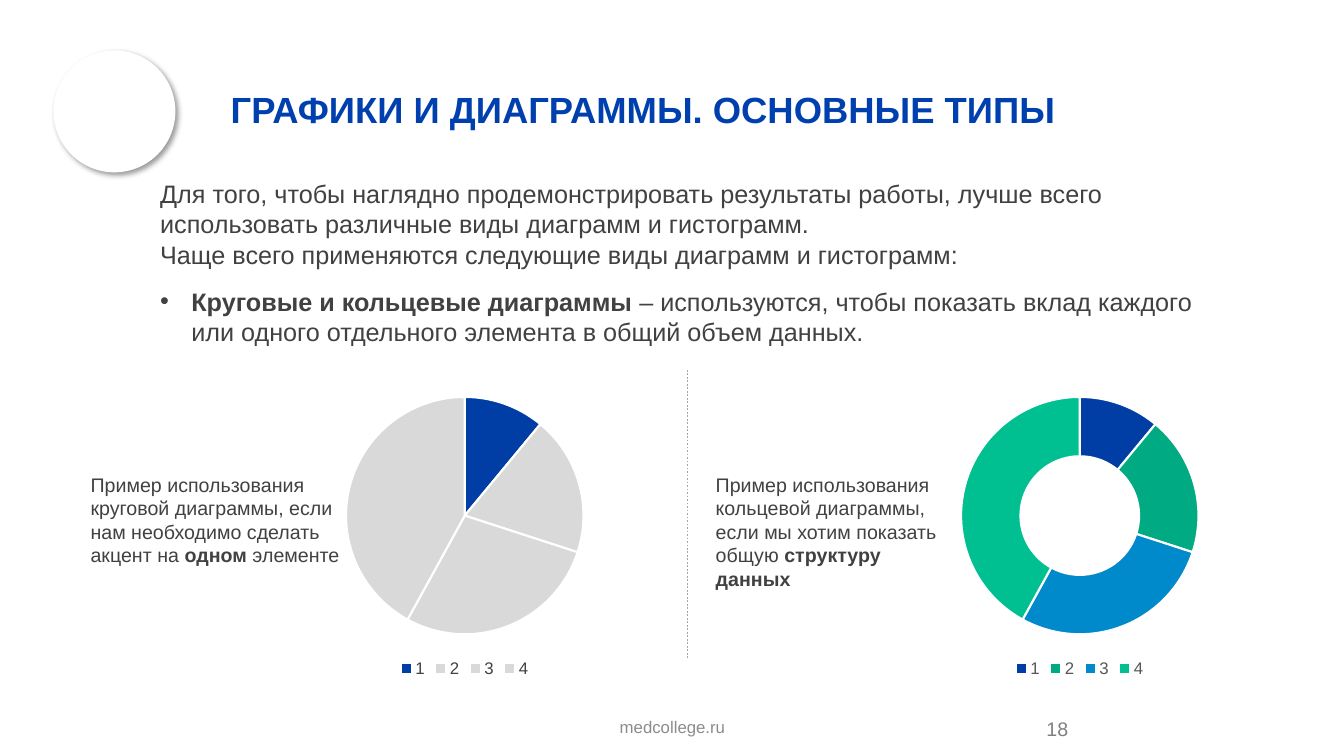
import pptx
import pptx.util
import pptx.chart.data
import pptx.dml.color
import pptx.enum.chart
import pptx.enum.dml
import pptx.enum.shapes
import pptx.enum.text
from lxml import etree
from pptx.oxml.ns import qn

Inches = pptx.util.Inches
Pt = pptx.util.Pt
RGBColor = pptx.dml.color.RGBColor
PP_ALIGN = pptx.enum.text.PP_ALIGN
MSO_ANCHOR = pptx.enum.text.MSO_ANCHOR
XL_CHART_TYPE = pptx.enum.chart.XL_CHART_TYPE

FONT = "Arial"
WHITE = RGBColor(0xFF, 0xFF, 0xFF)
TITLE_BLUE = RGBColor(0x00, 0x40, 0xAE)
TEXT_GRAY = RGBColor(0x41, 0x41, 0x41)
LABEL_GRAY = RGBColor(0x57, 0x57, 0x57)
NUMBER_GRAY = RGBColor(0x80, 0x80, 0x80)
FOOTER_GRAY = RGBColor(0x8C, 0x8C, 0x8C)
DIVIDER_GRAY = RGBColor(0xA6, 0xA6, 0xA6)
NAVY = RGBColor(0x00, 0x3D, 0xA5)
MUTED = RGBColor(0xD9, 0xD9, 0xD9)
GREEN = RGBColor(0x00, 0xAB, 0x84)
BLUE = RGBColor(0x00, 0x89, 0xCB)
MINT = RGBColor(0x00, 0xC0, 0x92)

SHARES = {"1": 11, "2": 19, "3": 28, "4": 42}


def add_text(slide, left, top, width, height, paragraphs, size, color):
    box = slide.shapes.add_textbox(Inches(left), Inches(top), Inches(width), Inches(height))
    frame = box.text_frame
    frame.word_wrap = True
    for index, pieces in enumerate(paragraphs):
        paragraph = frame.add_paragraph() if index else frame.paragraphs[0]
        for text, bold in pieces:
            run = paragraph.add_run()
            run.text = text
            run.font.name = FONT
            run.font.size = Pt(size)
            run.font.bold = bold
            run.font.color.rgb = color
    return frame


def add_bullet(paragraph, indent):
    properties = paragraph._p.get_or_add_pPr()
    properties.set("marL", str(Inches(indent)))
    properties.set("indent", str(-Inches(indent)))
    etree.SubElement(properties, qn("a:buFont"), typeface=FONT)
    etree.SubElement(properties, qn("a:buChar"), char="•")


def add_badge(slide):
    badge = slide.shapes.add_shape(
        pptx.enum.shapes.MSO_SHAPE.OVAL, Inches(0.53), Inches(0.5), Inches(1.21), Inches(1.21))
    badge.fill.solid()
    badge.fill.fore_color.rgb = WHITE
    badge.line.fill.background()
    badge.shadow.inherit = False
    effects = badge._element.spPr.find(qn("a:effectLst"))
    shadow = etree.SubElement(
        effects, qn("a:outerShdw"), blurRad=str(Pt(4)), dist=str(Pt(3)),
        dir="2700000", algn="tl", rotWithShape="0")
    shade = etree.SubElement(shadow, qn("a:srgbClr"), val="000000")
    etree.SubElement(shade, qn("a:alpha"), val="40000")


def add_divider(slide):
    divider = slide.shapes.add_connector(
        pptx.enum.shapes.MSO_CONNECTOR.STRAIGHT,
        Inches(6.82), Inches(3.67), Inches(6.82), Inches(6.54))
    divider.line.color.rgb = DIVIDER_GRAY
    divider.line.width = Pt(1.25)
    divider.line.dash_style = pptx.enum.dml.MSO_LINE.ROUND_DOT
    etree.SubElement(divider._element.spPr, qn("a:effectLst"))


def add_share_chart(slide, kind, left, width, colors, legend_color):
    data = pptx.chart.data.CategoryChartData()
    data.categories = list(SHARES)
    data.add_series("Series 1", list(SHARES.values()))
    chart = slide.shapes.add_chart(
        kind, Inches(left), Inches(3.8), Inches(width), Inches(2.96), data).chart
    chart.has_title = False
    chart.font.name = FONT
    chart.font.size = Pt(10)
    chart.font.color.rgb = LABEL_GRAY
    chart.has_legend = True
    chart.legend.position = pptx.enum.chart.XL_LEGEND_POSITION.BOTTOM
    chart.legend.include_in_layout = False
    chart.legend.font.name = FONT
    chart.legend.font.size = Pt(12)
    chart.legend.font.color.rgb = legend_color
    plot = chart.plots[0]
    plot.vary_by_categories = True
    plot.has_data_labels = False
    for index, color in enumerate(colors):
        sector = plot.series[0].points[index].format
        sector.fill.solid()
        sector.fill.fore_color.rgb = color
        sector.line.color.rgb = WHITE
        sector.line.width = Pt(1.5)
    return chart


def add_title(slide):
    title = add_text(slide, 2.19, 0.5, 10.4, 1.21,
                     [[("ГРАФИКИ И ДИАГРАММЫ. ОСНОВНЫЕ ТИПЫ", True)]], 26, TITLE_BLUE)
    title.vertical_anchor = MSO_ANCHOR.MIDDLE
    title.margin_top = title.margin_bottom = Inches(0.04)
    title.paragraphs[0].line_spacing = 0.9


def add_introduction(slide):
    introduction = add_text(slide, 1.49, 1.72, 10.67, 1.78, [
        [("Для того, чтобы наглядно продемонстрировать результаты работы, лучше всего "
          "использовать различные виды диаграмм и гистограмм.", False)],
        [("Чаще всего применяются следующие виды диаграмм и гистограмм:", False)],
        [("Круговые и кольцевые диаграммы ", True),
         ("– используются, чтобы показать вклад каждого или одного отдельного "
          "элемента в общий объем данных.", False)],
    ], 18, TEXT_GRAY)
    _, lead, chart_type = introduction.paragraphs
    lead.space_after = Pt(12)
    chart_type.space_after = Pt(6)
    add_bullet(chart_type, 0.31)


def add_footer(slide):
    number = add_text(slide, 10.28, 7.02, 1.88, 0.41, [[("18", False)]], 14, NUMBER_GRAY)
    number.vertical_anchor = MSO_ANCHOR.MIDDLE
    site = add_text(slide, 4.42, 7.06, 4.5, 0.4, [[("medcollege.ru", False)]], 12, FOOTER_GRAY)
    site.paragraphs[0].alignment = PP_ALIGN.CENTER


def main():
    presentation = pptx.Presentation()
    presentation.slide_width = Inches(13.33)
    presentation.slide_height = Inches(7.5)
    slide = presentation.slides.add_slide(presentation.slide_layouts[6])
    add_badge(slide)
    add_footer(slide)
    add_title(slide)
    add_introduction(slide)
    add_share_chart(slide, XL_CHART_TYPE.PIE, 2.13, 4.96, [NAVY, MUTED, MUTED, MUTED], TEXT_GRAY)
    add_share_chart(slide, XL_CHART_TYPE.DOUGHNUT, 8.28, 4.86,
                    [NAVY, GREEN, BLUE, MINT], LABEL_GRAY)
    add_text(slide, 0.8, 4.64, 2.67, 1.04, [[
        ("Пример использования круговой диаграммы, если нам необходимо сделать акцент на ", False),
        ("одном", True), (" элементе", False)]], 14, TEXT_GRAY)
    add_text(slide, 7, 4.64, 2.55, 1.28, [[
        ("Пример использования кольцевой диаграммы, если мы хотим показать общую ", False),
        ("структуру данных", True)]], 14, TEXT_GRAY)
    add_divider(slide)
    presentation.save("out.pptx")


if __name__ == "__main__":
    main()
